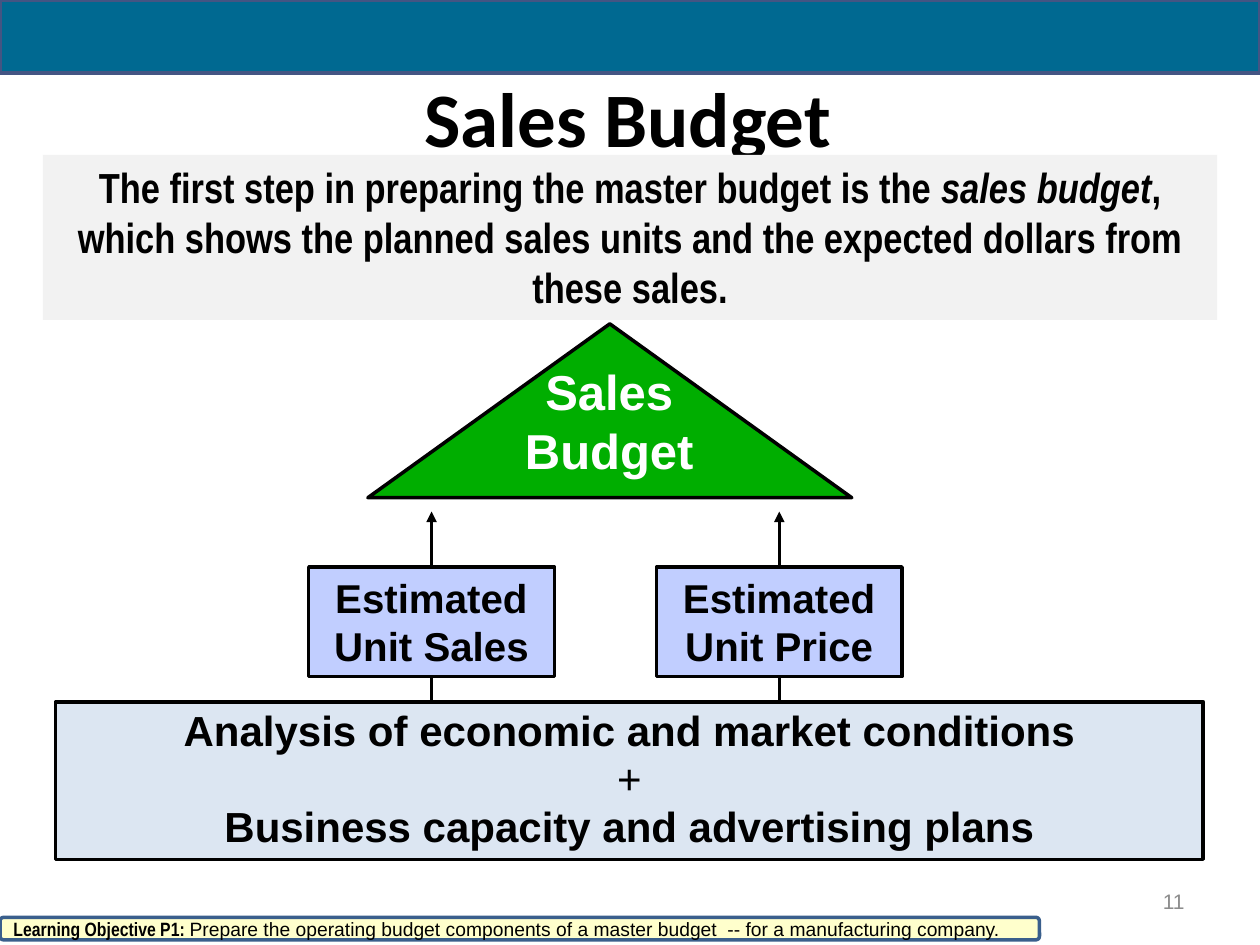
"""Build the Sales Budget slide."""
import pptx
import pptx.dml.color
import pptx.enum.shapes
import pptx.enum.text
import pptx.oxml.ns
import pptx.util
from lxml import etree

Inches, Pt = pptx.util.Inches, pptx.util.Pt
SHAPE = pptx.enum.shapes.MSO_SHAPE
ANCHOR = pptx.enum.text.MSO_ANCHOR
ALIGN = pptx.enum.text.PP_ALIGN
COLORS = {
    "banner": "006991", "banner_line": "445583", "black": "000000",
    "white": "FFFFFF", "green": "00AE00", "lilac": "C1CEFF",
    "panel": "DCE6F2", "gray": "F2F2F2", "number": "8C8C8C",
    "yellow": "FFFFCC", "objective_line": "3A5F8C",
}


def rgb(name):
    return pptx.dml.color.RGBColor.from_string(COLORS[name])


def write(sp, runs, size, font="Arial", color="black", bold=True,
          align=ALIGN.CENTER, anchor=ANCHOR.TOP, spacing=None):
    """Fill sp with (text, overrides) runs; a newline is a line break."""
    tf = sp.text_frame
    tf.word_wrap = True
    tf.vertical_anchor = anchor
    p = tf.paragraphs[0]
    p.alignment = align
    if spacing:
        p.line_spacing = spacing
    for text, own in runs:
        for i, line in enumerate(text.split("\n")):
            if i:
                p.add_line_break()
            if not line:
                continue
            r = p.add_run()
            r.text = line
            r.font.size = Pt(size)
            r.font.name = own.get("font", font)
            r.font.bold = own.get("bold", bold)
            r.font.italic = own.get("italic", False)
            r.font.color.rgb = rgb(color)


def add_box(s, kind, at, fill, line=None, width=2):
    sp = s.shapes.add_shape(kind, *map(Inches, at))
    sp.shadow.inherit = False
    sp.fill.solid()
    sp.fill.fore_color.rgb = rgb(fill)
    if line:
        sp.line.color.rgb = rgb(line)
        sp.line.width = Pt(width)
    else:
        sp.line.fill.background()
    return sp


def add_arrow(s, x, bottom, top):
    c = s.shapes.add_connector(
        pptx.enum.shapes.MSO_CONNECTOR.STRAIGHT,
        Inches(x), Inches(bottom), Inches(x), Inches(top))
    c.line.color.rgb = rgb("black")
    c.line.width = Pt(2)
    qn = pptx.oxml.ns.qn
    etree.SubElement(c.line._get_or_add_ln(), qn("a:tailEnd"), type="triangle")
    etree.SubElement(c._element.spPr, qn("a:effectLst"))


def add_text(s, at, runs, size, **fmt):
    write(s.shapes.add_textbox(*map(Inches, at)), runs, size, **fmt)


def add_title(s, text, at):
    sp = s.shapes.title
    sp.left, sp.top, sp.width, sp.height = map(Inches, at)
    write(sp, [(text, {})], 44, font="Calibri", anchor=ANCHOR.MIDDLE)


def main():
    prs = pptx.Presentation()
    prs.slide_width, prs.slide_height = Inches(10), Inches(7.5)
    s = prs.slides.add_slide(prs.slide_layouts[5])

    add_box(s, SHAPE.RECTANGLE, (0, 0, 10, 0.58), "banner", "banner_line", 2.25)
    add_title(s, "Sales Budget", (0.32, 0.3, 9.33, 1.25))

    sp = add_box(s, SHAPE.RECTANGLE, (0.34, 1.23, 9.32, 1.31), "gray")
    write(sp, [
        ("The first step in preparing the master budget is the ", {}),
        ("sales budget", {"italic": True}),
        (", which shows the planned sales units and the expected dollars "
         "from these sales.", {}),
    ], 24, font="Arial Narrow")

    add_box(s, SHAPE.ISOSCELES_TRIANGLE, (2.92, 2.57, 3.84, 1.38), "green", "black")
    add_text(s, (3.98, 2.82, 1.71, 1.04), [("Sales\nBudget", {})], 28, color="white")

    box_w = 1.95
    for left, label in ((2.45, "Unit Sales"), (5.21, "Unit Price")):
        for bottom, top in ((6.2, 5.26), (4.75, 4.06)):
            add_arrow(s, left + box_w / 2, bottom, top)
        sp = add_box(s, SHAPE.RECTANGLE, (left, 4.5, box_w, 0.87), "lilac", "black")
        write(sp, [("Estimated\n" + label, {})], 23)

    sp = add_box(s, SHAPE.RECTANGLE, (0.44, 5.57, 9.11, 1.25), "panel", "black")
    write(sp, [
        ("Analysis of economic and market conditions\n", {}),
        ("+\n", {"bold": False}),
        ("Business capacity and advertising plans", {}),
    ], 24, spacing=0.95)

    add_text(s, (7.17, 6.95, 2.33, 0.4), [("11", {})], 12, color="number",
             bold=False, align=ALIGN.RIGHT, anchor=ANCHOR.MIDDLE)

    sp = add_box(s, SHAPE.ROUNDED_RECTANGLE, (0, 7.28, 8.25, 0.18),
                 "yellow", "objective_line")
    write(sp, [
        ("Learning Objective P1: ", {"font": "Arial Narrow", "bold": True}),
        ("Prepare the operating budget components of a master budget  -- "
         "for a manufacturing company.", {}),
    ], 11, bold=False, align=ALIGN.LEFT, anchor=ANCHOR.MIDDLE)

    prs.save("out.pptx")


if __name__ == "__main__":
    main()
